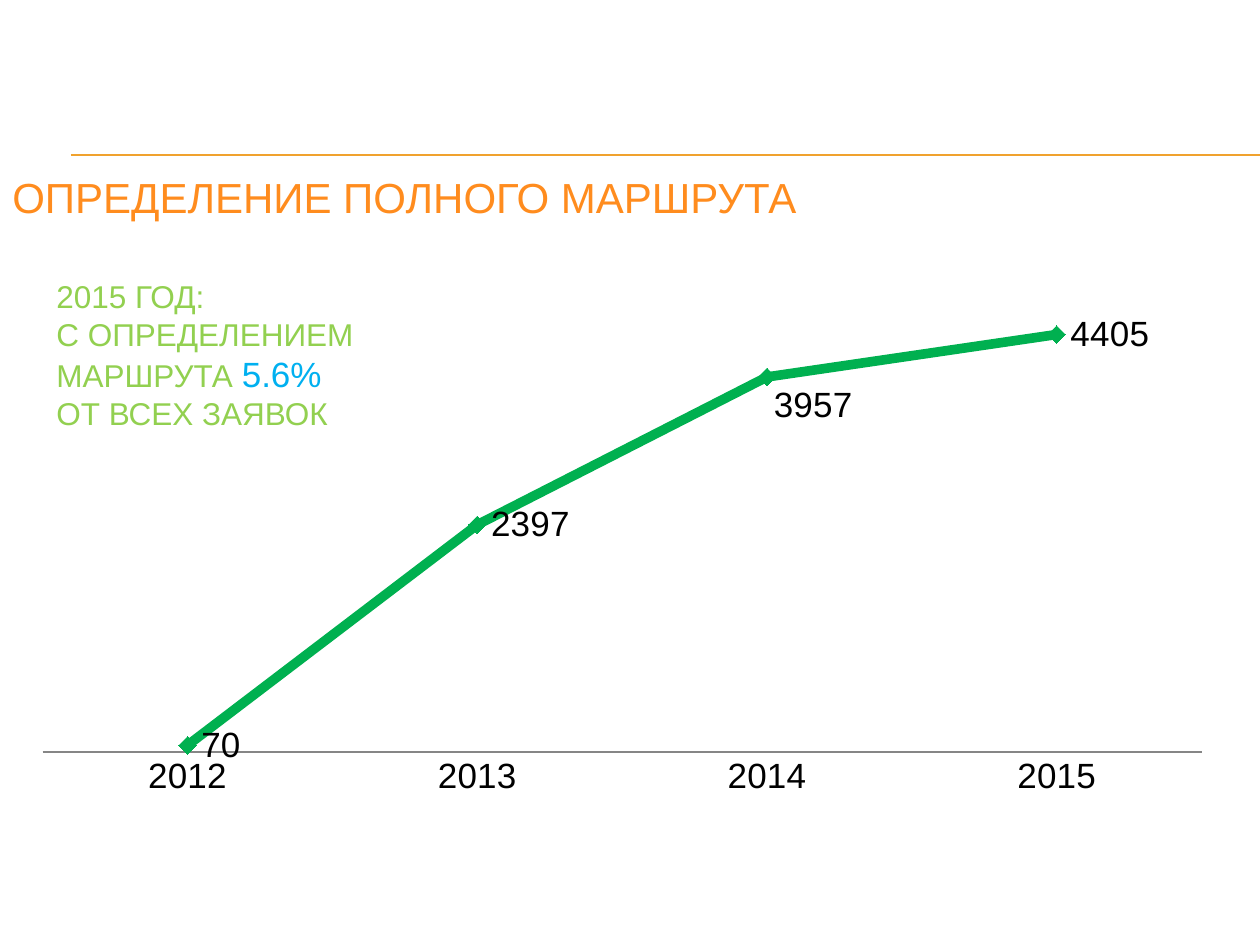
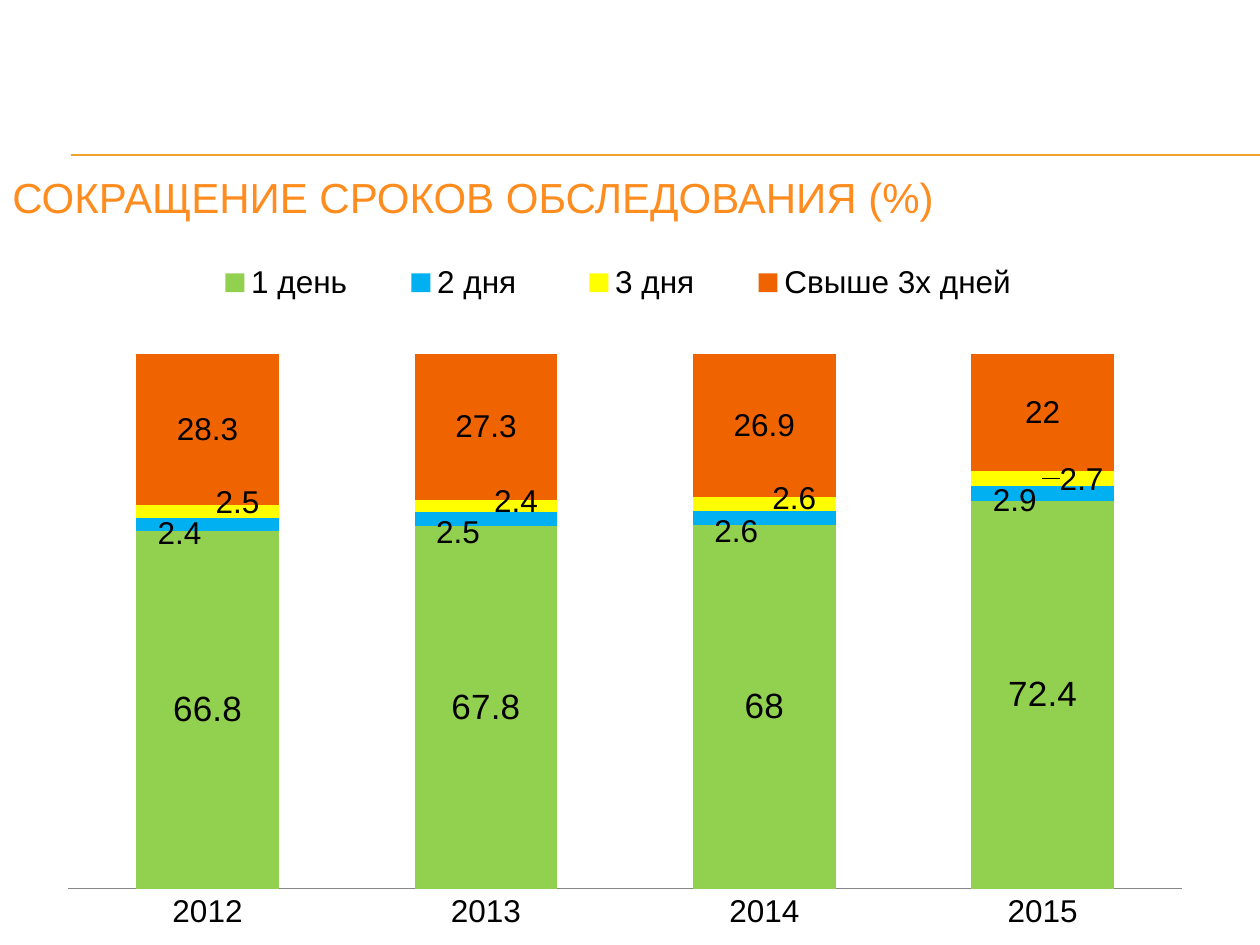
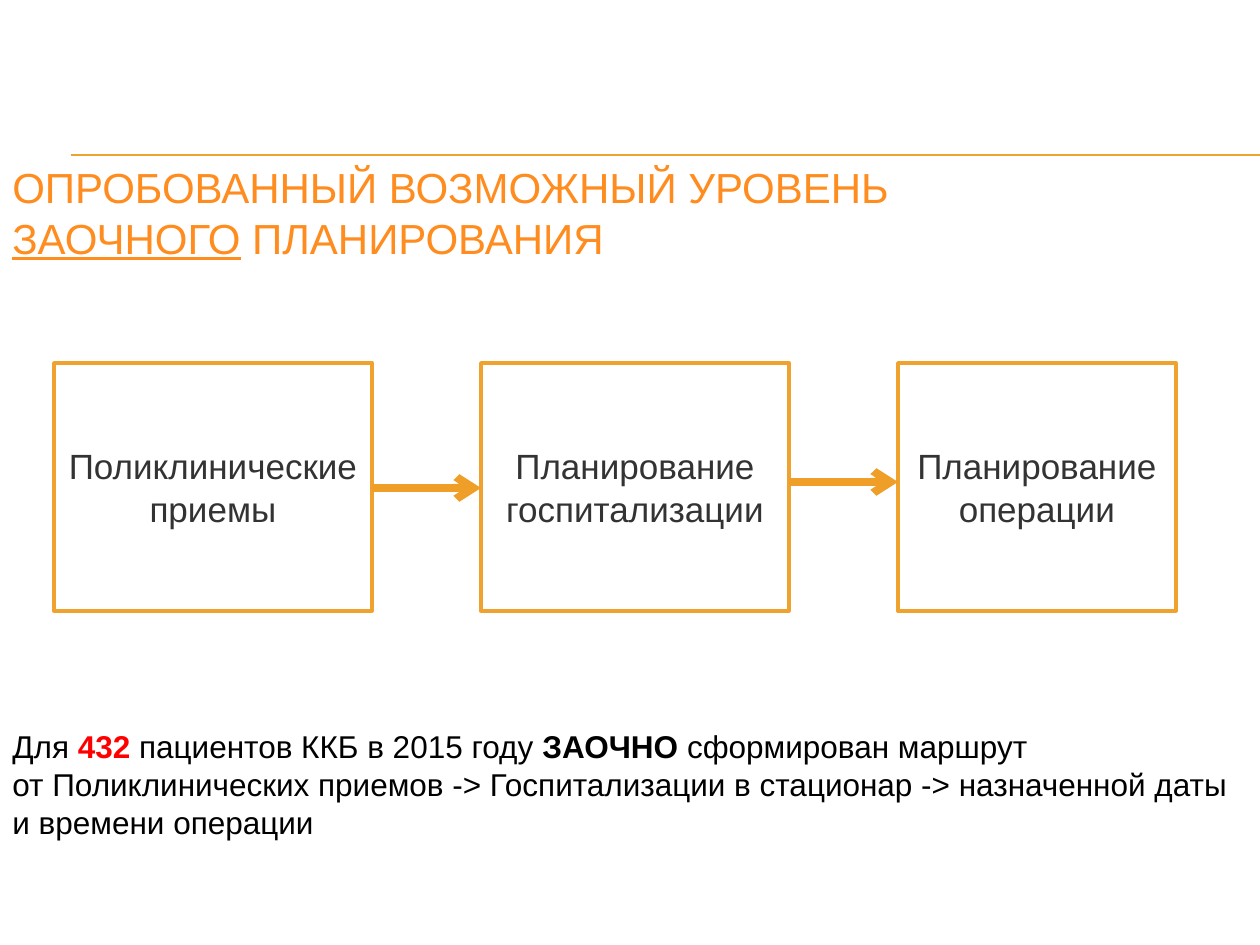
from lxml import etree
from pptx import Presentation
from pptx.chart.data import CategoryChartData
from pptx.dml.color import RGBColor
from pptx.enum.chart import (XL_CHART_TYPE, XL_LABEL_POSITION, XL_LEGEND_POSITION,
                             XL_MARKER_STYLE, XL_TICK_MARK)
from pptx.enum.shapes import MSO_CONNECTOR, MSO_SHAPE
from pptx.enum.text import MSO_ANCHOR, PP_ALIGN
from pptx.oxml.ns import qn
from pptx.util import Inches, Pt

LINE_CHART = XL_CHART_TYPE.LINE_MARKERS
STACKED_CHART = XL_CHART_TYPE.COLUMN_STACKED
RIGHT, CENTER = XL_LABEL_POSITION.RIGHT, XL_LABEL_POSITION.CENTER
NO_TICKS = XL_TICK_MARK.NONE
STRAIGHT, RECTANGLE = MSO_CONNECTOR.STRAIGHT, MSO_SHAPE.RECTANGLE
MIDDLE, TOP = MSO_ANCHOR.MIDDLE, MSO_ANCHOR.TOP
ALIGN_LEFT, ALIGN_CENTER = PP_ALIGN.LEFT, PP_ALIGN.CENTER

PX = 7257  # EMU in one px, 126 px to the inch
FONT = "Arial"
COLORS = {name: RGBColor.from_string(value) for name, value in {
    "title": "FF8C1E", "rule": "F0A22E", "arrow": "EF9F28", "axis": "868686",
    "black": "000000", "dark": "333333", "white": "FFFFFF", "red": "FF0000",
    "green": "00B050", "lime": "92D050", "blue": "00B0F0", "yellow": "FFFF00",
    "orange": "F06400"}.items()}
YEARS = ["2012", "2013", "2014", "2015"]


def write_text(shape, paragraphs, size, color, anchor=MIDDLE, alignment=ALIGN_LEFT):
    """Fill a shape with paragraphs, each a list of (text, format) runs."""
    frame = shape.text_frame
    frame.word_wrap = True
    frame.vertical_anchor = anchor
    for number, runs in enumerate(paragraphs):
        paragraph = frame.add_paragraph() if number else frame.paragraphs[0]
        paragraph.alignment = alignment
        for text, changes in runs:
            run = paragraph.add_run()
            run.text = text.rstrip("\n")
            values = {"name": FONT, "size": size, "color": color} | changes
            run.font.color.rgb = COLORS[values.pop("color")]
            run.font.size = Pt(values.pop("size"))
            for key, value in values.items():
                setattr(run.font, key, value)
            if text.endswith("\n"):
                paragraph.add_line_break()


def set_layout(parent, index, **values):
    """Give a chart part a manual layout, as fractions of the chart."""
    for old_layout in parent.findall(qn("c:layout")):
        parent.remove(old_layout)
    layout = etree.Element(qn("c:layout"))
    manual = etree.SubElement(layout, qn("c:manualLayout"))
    for key, value in values.items():
        etree.SubElement(manual, qn(f"c:{key}")).set("val", str(value))
    parent.insert(index, layout)


presentation = Presentation()
presentation.slide_width, presentation.slide_height = Inches(10), Inches(7.5)

# Rule and title on every slide
titles = [
    (76, [("ОПРЕДЕЛЕНИЕ ПОЛНОГО МАРШРУТА", {})]),
    (76, [("СОКРАЩЕНИЕ СРОКОВ ОБСЛЕДОВАНИЯ (%)", {})]),
    (106, [("ОПРОБОВАННЫЙ ВОЗМОЖНЫЙ УРОВЕНЬ \n", {}),
           ("ЗАОЧНОГО", {"underline": True}), (" ПЛАНИРОВАНИЯ", {})]),
]
connectors = []
for height, title in titles:
    slide = presentation.slides.add_slide(presentation.slide_layouts[6])
    rule = slide.shapes.add_connector(STRAIGHT, 71 * PX, 155 * PX, 1260 * PX, 155 * PX)
    connectors.append((rule, "rule", 0.75))
    title_box = slide.shapes.add_textbox(0, 159 * PX, 1239 * PX, height * PX)
    write_text(title_box, [title], 24, "title")
route_slide, timing_slide, planning_slide = presentation.slides

# Charts: slide, type, box, font size, axis maximum, plot area, series
charts = []
for slide, kind, box, size, maximum, plot_area, series_values in [
    (route_slide, LINE_CHART, (42, 275, 1198, 631), 20, 5000,
     {"x": 0, "y": 0.005, "w": 0.968, "h": 0.751},
     {"Series 1": [70, 2397, 3957, 4405]}),
    (timing_slide, STACKED_CHART, (44, 175, 1160, 770), 18, 100,
     {"x": 0.021, "y": 0.232, "w": 0.96, "h": 0.695},
     {"1 день": [66.8, 67.8, 68, 72.4], "2 дня ": [2.4, 2.5, 2.6, 2.9],
      "3 дня": [2.5, 2.4, 2.6, 2.7], "Свыше 3х дней": [28.3, 27.3, 26.9, 22]}),
]:
    data = CategoryChartData()
    data.categories = YEARS
    for name, values in series_values.items():
        data.add_series(name, values)
    chart = slide.shapes.add_chart(kind, *[value * PX for value in box], data).chart
    chart.has_title = chart.has_legend = False
    chart.font.name, chart.font.size = FONT, Pt(size)
    chart.font.color.rgb = COLORS["black"]
    chart.plots[0].vary_by_categories = False
    chart.category_axis.major_tick_mark = NO_TICKS
    chart.category_axis.format.line.color.rgb = COLORS["axis"]
    value_axis = chart.value_axis
    value_axis.minimum_scale, value_axis.maximum_scale = 0, maximum
    value_axis.has_major_gridlines = value_axis.visible = False
    plot_element = chart.plots[0].series[0]._element.getparent().getparent()
    set_layout(plot_element, 0, layoutTarget="inner", xMode="edge", yMode="edge", **plot_area)
    charts.append(chart)
route_chart, timing_chart = charts

# Line of routes
route_series = route_chart.plots[0].series[0]
route_series.smooth = False
route_series.format.line.color.rgb = COLORS["green"]
route_series.format.line.width = Pt(5.5)
route_series.marker.style, route_series.marker.size = XL_MARKER_STYLE.DIAMOND, 10
route_series.marker.format.fill.solid()
route_series.marker.format.fill.fore_color.rgb = COLORS["green"]
route_series.marker.format.line.color.rgb = COLORS["green"]

# Stacked columns and their legend
timing_chart.plots[0].gap_width, timing_chart.plots[0].overlap = 95, 100
timing_series = list(timing_chart.plots[0].series)
for series, color in zip(timing_series, ["lime", "blue", "yellow", "orange"]):
    series.format.fill.solid()
    series.format.fill.fore_color.rgb = COLORS[color]
timing_chart.has_legend = True
legend = timing_chart.legend
legend.position, legend.include_in_layout = XL_LEGEND_POSITION.TOP, False
set_layout(legend._element, 1, xMode="edge", yMode="edge", x=0.11, y=0.1, w=0.77, h=0.08)

# Value labels: series, size, position, chart size, shifts in px by point
for series, size, position, (width, height), shifts in [
    (route_series, 20, RIGHT, (1198, 631), {2: (-7, 29)}),
    (timing_series[0], 20, CENTER, (1160, 770), {}),
    (timing_series[1], 18, CENTER, (1160, 770),
     {0: (-28, 9), 1: (-28, 13), 2: (-28, 14), 3: (-28, 7)}),
    (timing_series[2], 18, CENTER, (1160, 770),
     {0: (30, -9), 1: (30, -5), 2: (30, -6), 3: (39, 1)}),
    (timing_series[3], 18, CENTER, (1160, 770), {}),
]:
    labels = series.data_labels
    labels.show_value, labels.position = True, position
    labels.font.size = Pt(size)
    for index, (shift_x, shift_y) in shifts.items():
        label = series.points[index].data_label
        label.position = position
        label.font.size = Pt(size)
        label_element = labels._element.findall(qn("c:dLbl"))[-1]
        set_layout(label_element, 1, x=round(shift_x / width, 4), y=round(shift_y / height, 4))

# Share of requests with a route
share_box = route_slide.shapes.add_textbox(44 * PX, 275 * PX, 452 * PX, 159 * PX)
write_text(share_box, [
    [("2015 ГОД:", {})],
    [("С ОПРЕДЕЛЕНИЕМ МАРШРУТА ", {}), ("5.6%", {"size": 20, "color": "blue"})],
    [("ОТ ВСЕХ ЗАЯВОК", {})],
], 18, "lime")

# Planning steps
for left, width, step in [(54, 318, "Поликлинические приемы"),
                          (481, 308, "Планирование госпитализации"),
                          (898, 278, "Планирование операции")]:
    step_box = planning_slide.shapes.add_shape(
        RECTANGLE, left * PX, 363 * PX, width * PX, 248 * PX)
    step_box.shadow.inherit = False
    step_box.fill.solid()
    step_box.fill.fore_color.rgb = COLORS["white"]
    step_box.line.color.rgb = COLORS["rule"]
    step_box.line.width = Pt(2)
    write_text(step_box, [[(step, {})]], 20, "dark", alignment=ALIGN_CENTER)

# Result of remote planning
result_box = planning_slide.shapes.add_textbox(0, 721 * PX, 1260 * PX, 127 * PX)
write_text(result_box, [
    [("Для ", {}), ("432 ", {"color": "red", "bold": True}),
     ("пациентов ККБ в 2015 году ", {}), ("ЗАОЧНО ", {"bold": True}),
     ("сформирован маршрут", {})],
    [("от Поликлинических приемов -> Госпитализации в стационар -> "
      "назначенной даты и времени операции", {})],
], 18, "black", anchor=TOP)

# Arrows between the steps
for start, end, y in [(372, 481, 488), (789, 898, 482)]:
    arrow = planning_slide.shapes.add_connector(STRAIGHT, start * PX, y * PX, end * PX, y * PX)
    connectors.append((arrow, "arrow", 4.5))

# Line style of rules and arrows
for connector, color, width in connectors:
    connector.line.color.rgb = COLORS[color]
    connector.line.width = Pt(width)
    properties = connector._element.spPr
    if color == "arrow":
        line_element = properties.find(qn("a:ln"))
        etree.SubElement(line_element, qn("a:tailEnd")).set("type", "arrow")
    etree.SubElement(properties, qn("a:effectLst"))

presentation.save("out.pptx")
